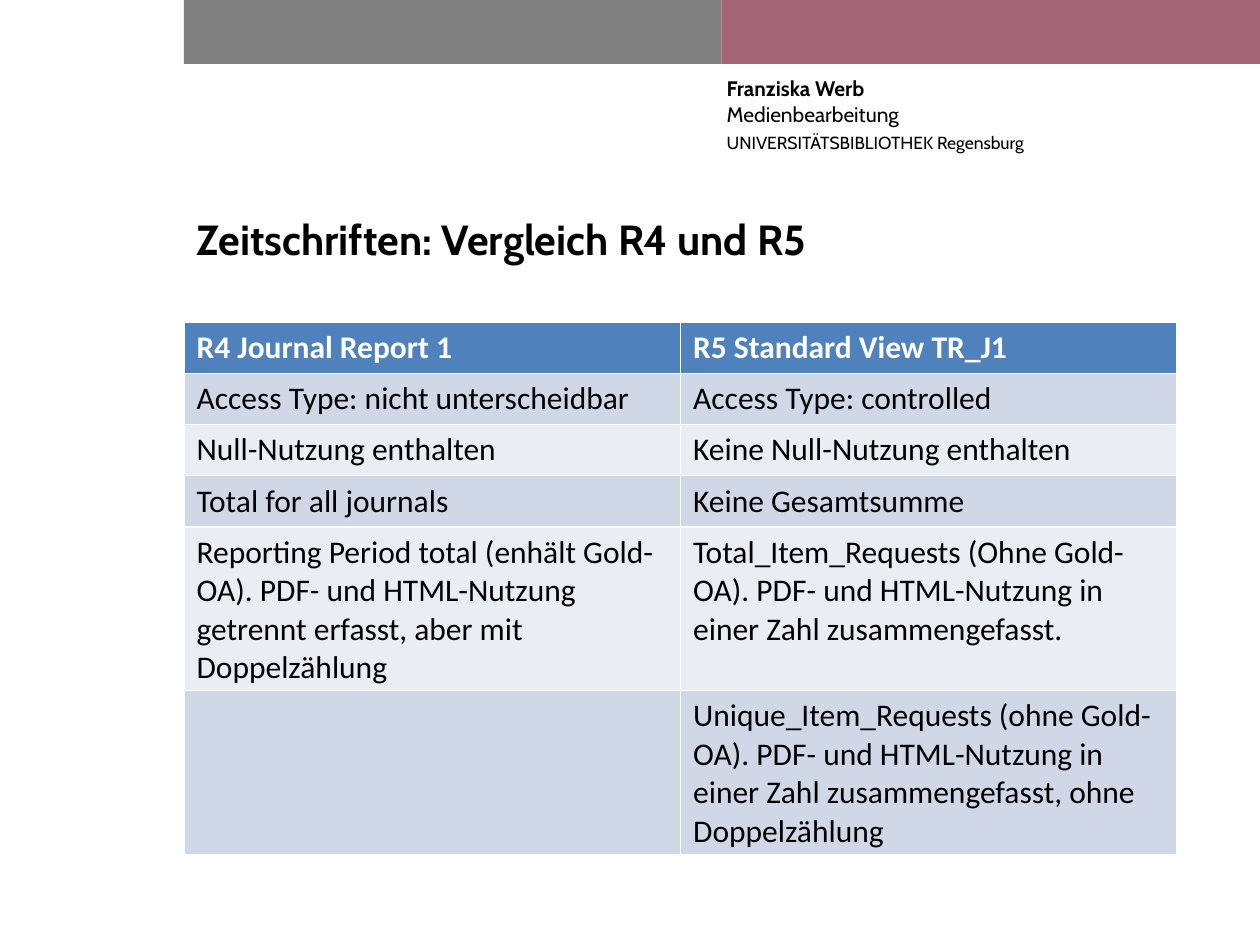
from pptx import Presentation
from pptx.dml.color import RGBColor
from pptx.enum.shapes import MSO_SHAPE
from pptx.enum.text import MSO_ANCHOR, MSO_AUTO_SIZE, PP_ALIGN
from pptx.util import Cm, Pt

LEFT = 3.71
MIDDLE = 14.55
RIGHT = 25.4
ROWS = [
    ("R4 Journal Report 1", "R5 Standard View TR_J1"),
    ("Access Type: nicht unterscheidbar", "Access Type: controlled"),
    ("Null-Nutzung enthalten", "Keine Null-Nutzung enthalten"),
    ("Total for all journals", "Keine Gesamtsumme"),
    ("Reporting Period total (enhält Gold-OA). PDF- und HTML-Nutzung getrennt "
     "erfasst, aber mit Doppelzählung",
     "Total_Item_Requests (Ohne Gold-OA). PDF- und HTML-Nutzung in einer Zahl "
     "zusammengefasst."),
    ("", "Unique_Item_Requests (ohne Gold-OA). PDF- und HTML-Nutzung in einer Zahl "
     "zusammengefasst, ohne Doppelzählung"),
]


def rgb(value):
    return RGBColor.from_string(value)


def apply(obj, formats):
    for name, value in formats.items():
        setattr(obj, name, value)


def set_font(font, size, color="000000", bold=False, name="Cabin"):
    apply(font, {"name": name, "size": Pt(size), "bold": bold})
    font.color.rgb = rgb(color)


def add_run(p, text, size, bold=False):
    r = p.add_run()
    r.text = text
    set_font(r.font, size, bold=bold)


def add_bar(s, left, right, color):
    sp = s.shapes.add_shape(MSO_SHAPE.RECTANGLE, Cm(left), Cm(0), Cm(right - left), Cm(1.29))
    sp.shadow.inherit = False
    sp.fill.solid()
    sp.fill.fore_color.rgb = rgb(color)
    sp.line.fill.background()


def add_sender(s):
    tf = s.shapes.add_textbox(Cm(14.65), Cm(1.53), Cm(10.26), Cm(2.4)).text_frame
    apply(tf, {"word_wrap": True, "margin_left": 0, "margin_top": 0,
               "margin_right": 0, "margin_bottom": 0})
    p = tf.paragraphs[0]
    add_run(p, "Franziska Werb", 12, bold=True)
    p.add_line_break()
    add_run(p, "Medienbearbeitung", 12)
    p.space_after = Pt(3)
    p = tf.add_paragraph()
    add_run(p, "UNIVERSITÄTSBIBLIOTHEK Regensburg", 10)
    p.space_after = Pt(3)


def set_title(s, text):
    sp = s.shapes.title
    apply(sp, {"left": Cm(LEFT), "top": Cm(4.17), "width": Cm(19.96), "height": Cm(1.93)})
    tf = sp.text_frame
    apply(tf, {"vertical_anchor": MSO_ANCHOR.TOP, "auto_size": MSO_AUTO_SIZE.NONE,
               "word_wrap": True})
    p = tf.paragraphs[0]
    p.alignment = PP_ALIGN.LEFT
    add_run(p, text, 24, bold=True)


def add_comparison(s, rows):
    height = 1.03
    table = s.shapes.add_table(len(rows), 2, Cm(LEFT), Cm(6.5), Cm(20.02),
                               Cm(height * len(rows))).table
    for i, texts in enumerate(rows):
        table.rows[i].height = Cm(height)
        head = i == 0
        fill = "4F81BD" if head else ("E9EDF4", "D0D8E8")[i % 2]
        for j, text in enumerate(texts):
            cell = table.cell(i, j)
            cell.fill.solid()
            cell.fill.fore_color.rgb = rgb(fill)
            cell.text = text
            set_font(cell.text_frame.paragraphs[0].font, 18,
                     "FFFFFF" if head else "000000", head, "Calibri")


def main():
    prs = Presentation()
    apply(prs, {"slide_width": Cm(RIGHT), "slide_height": Cm(19.05)})
    s = prs.slides.add_slide(prs.slide_layouts[5])
    add_bar(s, LEFT, MIDDLE, "808080")
    add_bar(s, MIDDLE, RIGHT, "A46674")
    add_sender(s)
    set_title(s, "Zeitschriften: Vergleich R4 und R5")
    add_comparison(s, ROWS)
    prs.save("out.pptx")


if __name__ == "__main__":
    main()
